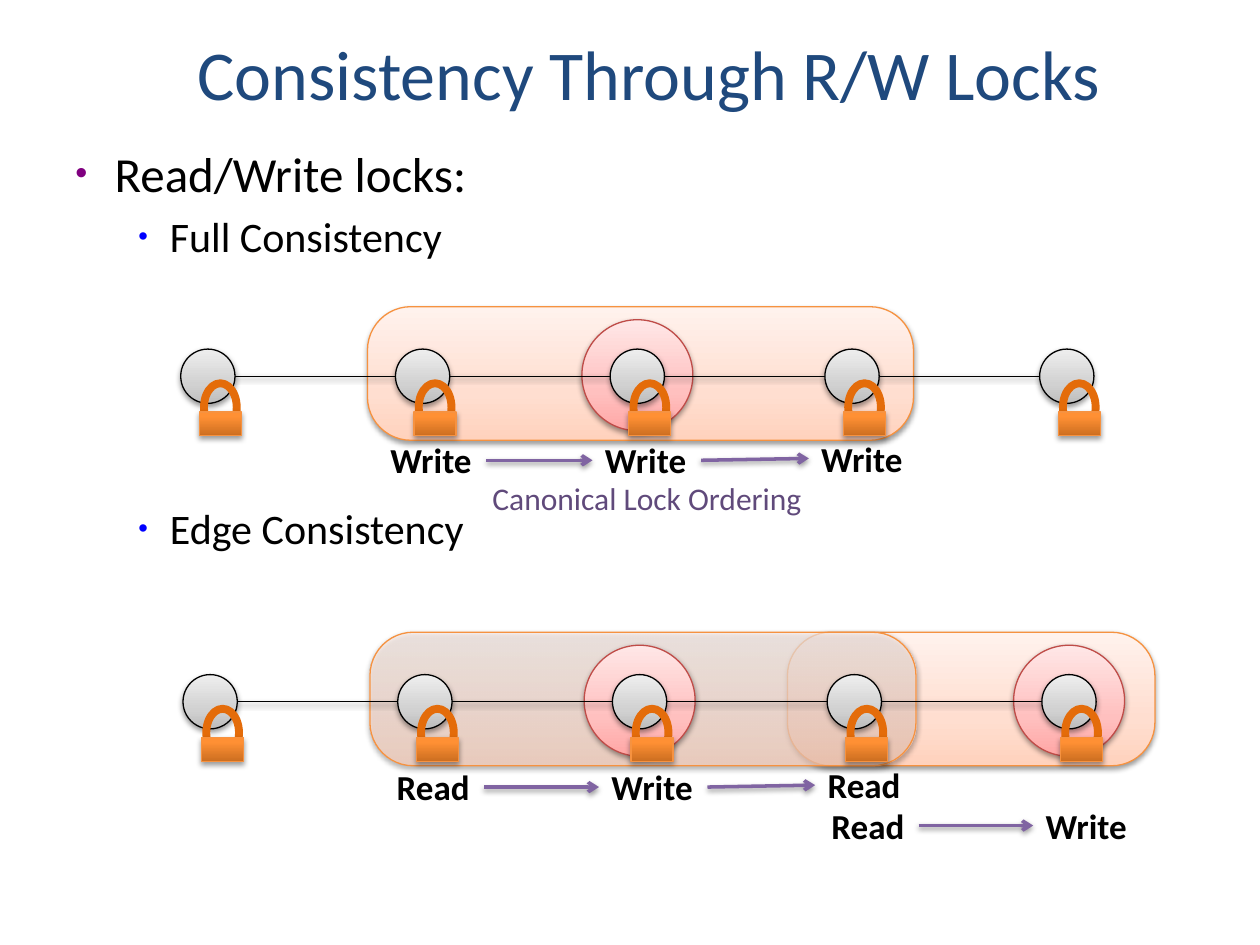
from dataclasses import dataclass

from lxml.etree import SubElement
from pptx import Presentation
from pptx.dml.color import RGBColor
from pptx.enum.shapes import MSO_CONNECTOR as Connector, MSO_SHAPE as Shape
from pptx.enum.text import MSO_ANCHOR as Anchor, MSO_AUTO_SIZE as AutoSize
from pptx.oxml.ns import qn
from pptx.util import Pt


@dataclass(frozen=True)
class Theme:
    font: str = "Calibri"
    title_size: int = 40
    body_size: int = 28
    sub_size: int = 24
    label_size: int = 20
    note_size: int = 18
    title: str = "1F497D"
    text: str = "000000"
    note: str = "604A7B"
    arrow: str = "8064A2"
    bullet: str = "800080"
    sub_bullet: str = "0000FF"
    zone_line: str = "F69240"
    ring_line: str = "BF4C48"
    shackle: str = "E46C0A"
    # Gradients run from bottom to top as (percent, colour).
    zone: tuple = ((0, "FFD2BD"), (35, "FFDED0"), (100, "FFF2ED"))
    ring: tuple = ((0, "FFA6A5"), (35, "FFC0BF"), (100, "FFE7E7"))
    node: tuple = ((0, "BDBDBD"), (35, "D1D1D1"), (100, "EEEEEE"))
    lock: tuple = ((0, "CC6E20"), (80, "FF9034"), (100, "FF9136"))


THEME = Theme()
NODE_COUNT = 5
NODE_PITCH = 122.7
NODE_SIZE = 31
RING_SIZE = 63.4
ZONE_HEIGHT = 76.3
LABEL_HEIGHT = 31.5
LABEL_WIDTHS = {"Write": 62, "Read": 57}


def add_child(parent, tag, **attributes):
    return SubElement(parent, qn(tag), {k: str(v) for k, v in attributes.items()})


def add_shadow(effects):
    shadow = add_child(effects, "a:outerShdw", blurRad=Pt(3.1), dist=Pt(1.6),
                       dir=90 * 60000, rotWithShape=0)
    colour = add_child(shadow, "a:srgbClr", val="000000")
    add_child(colour, "a:alpha", val=38000)


def fill_gradient(shape, stops, opacity):
    shape.fill.gradient()
    shape.fill.gradient_angle = 90
    stop_list = shape._element.spPr.find(qn("a:gradFill")).find(qn("a:gsLst"))
    for old_stop in list(stop_list):
        stop_list.remove(old_stop)
    for percent, rgb in stops:
        stop = add_child(stop_list, "a:gs", pos=percent * 1000)
        colour = add_child(stop, "a:srgbClr", val=rgb)
        if opacity < 100:
            add_child(colour, "a:alpha", val=opacity * 1000)


def add_figure(shapes, kind, left, top, width, height, line, stops=None,
               line_width=0.75, opacity=100):
    """Add a shape; one without gradient stops is a plain outline."""
    shape = shapes.add_shape(kind, Pt(left), Pt(top), Pt(width), Pt(height))
    shape.line.color.rgb = RGBColor.from_string(line)
    shape.line.width = Pt(line_width)
    shape.shadow.inherit = False
    if stops:
        fill_gradient(shape, stops, opacity)
        add_shadow(shape._element.spPr.find(qn("a:effectLst")))
    else:
        shape.fill.background()
    return shape


def add_line(page, start, end, colour, width):
    line = page.shapes.add_connector(Connector.STRAIGHT, *map(Pt, (*start, *end)))
    line.line.color.rgb = RGBColor.from_string(colour)
    line.line.width = Pt(width)
    add_shadow(add_child(line._element.spPr, "a:effectLst"))
    return line


def style(para, size, colour, bold=False):
    para.font.name = THEME.font
    para.font.size = Pt(size)
    para.font.bold = bold
    para.font.color.rgb = RGBColor.from_string(colour)


def add_text(page, text, left, top, width, height, size, colour, bold=False, wrap=False):
    box = page.shapes.add_textbox(Pt(left), Pt(top), Pt(width), Pt(height))
    frame = box.text_frame
    frame.word_wrap = wrap
    frame.auto_size = AutoSize.NONE if wrap else AutoSize.SHAPE_TO_FIT_TEXT
    frame.text = text
    style(frame.paragraphs[0], size, colour, bold)
    return box


def add_title(page, text):
    box = add_text(page, text, 105.8, 5.8, 590.4, 59.8,
                   THEME.title_size, THEME.title, wrap=True)
    box.text_frame.vertical_anchor = Anchor.BOTTOM
    box.text_frame.margin_bottom = 0


def add_bullet(para, indent, hanging, colour, percent):
    properties = para._p.get_or_add_pPr()
    properties.set("marL", str(Pt(indent)))
    properties.set("indent", str(Pt(-hanging)))
    add_child(add_child(properties, "a:buClr"), "a:srgbClr", val=colour)
    add_child(properties, "a:buSzPct", val=percent * 1000)
    add_child(properties, "a:buFont", typeface="Arial")
    add_child(properties, "a:buChar", char="•")


def add_outline(page, heading, items):
    """Add the heading and its (text, space before) sub-items in one box."""
    box = add_text(page, heading, 36, 78.3, 654, 264,
                   THEME.body_size, THEME.text, wrap=True)
    frame = box.text_frame
    add_bullet(frame.paragraphs[0], 22.5, 22.5, THEME.bullet, 70)
    for text, space in items:
        para = frame.add_paragraph()
        para.text = text
        para.level = 1
        para.space_before = Pt(space)
        style(para, THEME.sub_size, THEME.text)
        add_bullet(para, 54, 18, THEME.sub_bullet, 65)


def add_scope(page, left, width, ring_x, y, opacity=100):
    """Add a rounded zone and the ring of the vertex it belongs to."""
    zone = add_figure(page.shapes, Shape.ROUNDED_RECTANGLE, left, y - 39.7, width,
                      ZONE_HEIGHT, THEME.zone_line, THEME.zone, opacity=opacity)
    zone.adjustments[0] = 0.325
    add_figure(page.shapes, Shape.OVAL, ring_x - RING_SIZE / 2, y - 32.3,
               RING_SIZE, RING_SIZE, THEME.ring_line, THEME.ring)


def add_lock(page, x, y):
    group = page.shapes.add_group_shape()
    add_figure(group.shapes, Shape.OVAL, x - 2.2, y + 4, 18.7, 27.4,
               THEME.shackle, line_width=4.5)
    add_figure(group.shapes, Shape.RECTANGLE, x - 4.9, y + 20.4, 24, 13.7,
               THEME.zone_line, THEME.lock)


def add_chain(page, first_x, y):
    """Add the row of linked vertices, each with its lock."""
    radius = NODE_SIZE / 2
    last_x = first_x + (NODE_COUNT - 1) * NODE_PITCH
    add_line(page, (first_x + radius, y), (last_x - radius, y), THEME.text, 0.75)
    for index in range(NODE_COUNT):
        x = first_x + index * NODE_PITCH
        add_figure(page.shapes, Shape.OVAL, x - radius, y - radius,
                   NODE_SIZE, NODE_SIZE, THEME.text, THEME.node)
        add_lock(page, x, y)


def add_lock_order(page, labels):
    """Add (text, left, top) labels and an arrow from each to the next."""
    boxes = [add_text(page, text, left, top, LABEL_WIDTHS[text], LABEL_HEIGHT,
                      THEME.label_size, THEME.text, bold=True)
             for text, left, top in labels]
    for before, after in zip(boxes, boxes[1:]):
        arrow = add_line(page, (0, 0), (0, 0), THEME.arrow, 2)
        arrow.begin_connect(before, 3)
        arrow.end_connect(after, 1)
        add_child(arrow.line._get_or_add_ln(), "a:tailEnd", type="arrow")


def main():
    deck = Presentation()
    deck.slide_width, deck.slide_height = Pt(720), Pt(540)
    page = deck.slides.add_slide(deck.slide_layouts[6])

    add_title(page, "Consistency Through R/W Locks")
    add_outline(page, "Read/Write locks:",
                [("Full Consistency", 4.8), ("Edge Consistency", 138.1)])

    full_x, full_y = 118.8, 215
    add_scope(page, 210, 312, full_x + 2 * NODE_PITCH, full_y)
    add_chain(page, full_x, full_y)
    add_lock_order(page, [("Write", 216, 247.3), ("Write", 338.6, 247.3),
                          ("Write", 462.2, 246.2)])
    add_text(page, "Canonical Lock Ordering", 274.3, 270.2, 193.7, 29,
             THEME.note_size, THEME.note)

    edge_x, edge_y = 120.1, 401
    add_scope(page, 450, 210, edge_x + 4 * NODE_PITCH, edge_y)
    add_scope(page, 211.4, 312, edge_x + 2 * NODE_PITCH, edge_y, opacity=68)
    add_chain(page, edge_x, edge_y)
    add_lock_order(page, [("Read", 219.6, 434), ("Write", 342.3, 434),
                          ("Read", 465.8, 432.9)])
    add_lock_order(page, [("Read", 468, 456), ("Write", 590.4, 456)])

    deck.save("out.pptx")


if __name__ == "__main__":
    main()
